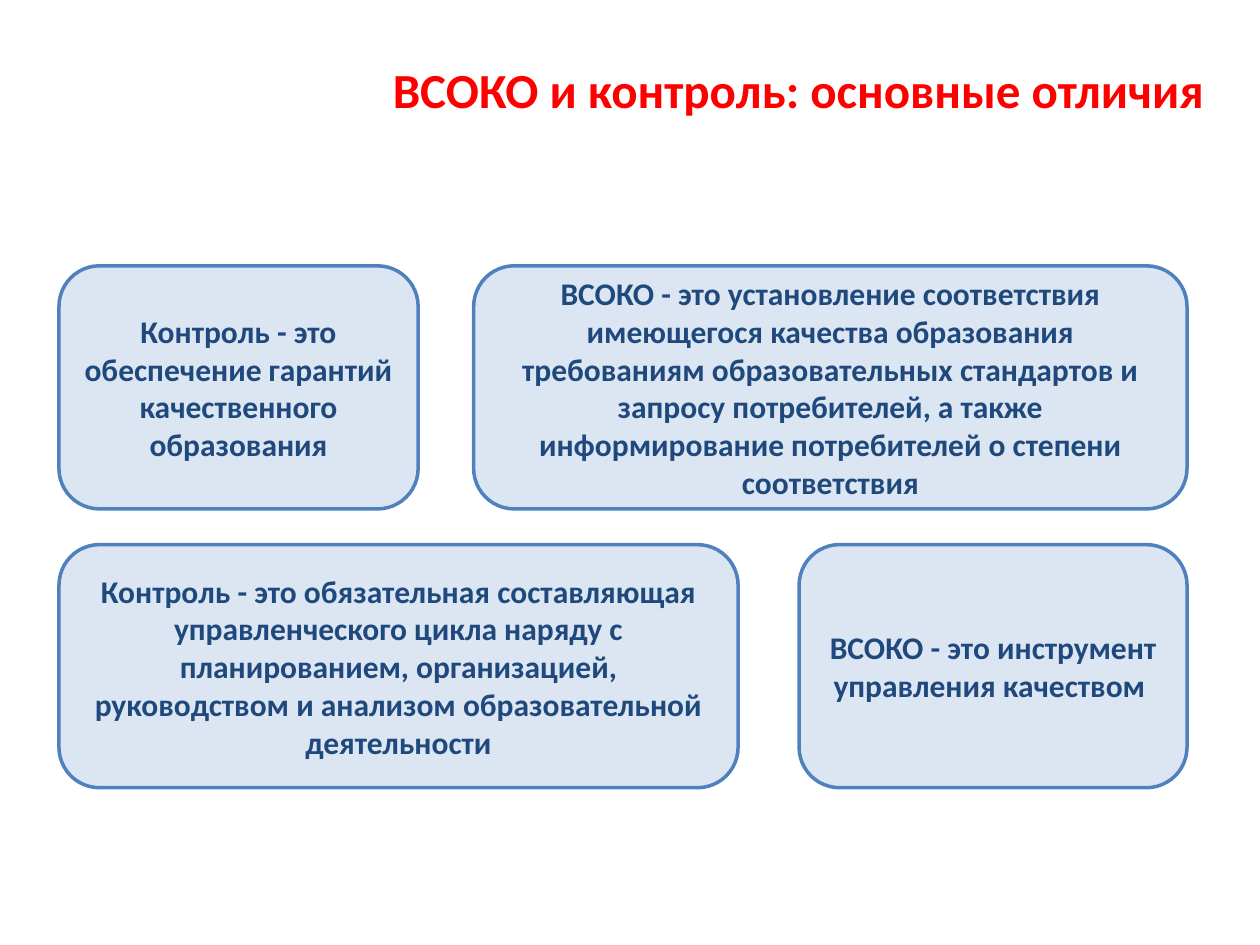
"""Build a slide contrasting internal quality assessment with control."""
from pptx import Presentation
from pptx.dml.color import RGBColor
from pptx.enum.shapes import MSO_SHAPE
from pptx.enum.text import MSO_ANCHOR, MSO_AUTO_SIZE, PP_ALIGN
from pptx.util import Cm, Pt

ROUNDED = MSO_SHAPE.ROUNDED_RECTANGLE
MIDDLE = MSO_ANCHOR.MIDDLE
NO_AUTOFIT = MSO_AUTO_SIZE.NONE
CENTER = PP_ALIGN.CENTER

TITLE = "ВСОКО и контроль: основные отличия"
ROWS = [
    [
        (7.24, "Контроль - это обеспечение гарантий качественного образования"),
        (14.38, "ВСОКО - это установление соответствия имеющегося качества "
                "образования требованиям образовательных стандартов и запросу "
                "потребителей, а также информирование потребителей о степени "
                "соответствия"),
    ],
    [
        (13.69, "Контроль - это обязательная составляющая управленческого цикла "
                "наряду с планированием, организацией, руководством и анализом "
                "образовательной деятельности"),
        (7.82, "ВСОКО - это инструмент управления качеством "),
    ],
]

COLORS = {"title": "FF0000", "text": "1F497D", "fill": "DCE6F2", "line": "4F81BD"}
FONT = "Calibri"
LEFT, RIGHT = 1.19, 23.93
TOP, ROW_STEP, CARD_HEIGHT = 5.36, 5.62, 4.9


def color(name):
    """Return a named slide colour."""
    return RGBColor.from_string(COLORS[name])


def set_text(shape, text, size, color_name):
    """Put centred bold text into a shape."""
    frame = shape.text_frame
    frame.text = text
    frame.word_wrap = True
    frame.auto_size = NO_AUTOFIT
    frame.vertical_anchor = MIDDLE
    paragraph = frame.paragraphs[0]
    paragraph.alignment = CENTER
    font = paragraph.runs[0].font
    font.name = FONT
    font.size = Pt(size)
    font.bold = True
    font.color.rgb = color(color_name)


def add_card(slide, left, top, width, text):
    """Add one rounded statement card."""
    card = slide.shapes.add_shape(
        ROUNDED, Cm(left), Cm(top), Cm(width), Cm(CARD_HEIGHT))
    card.shadow.inherit = False
    card.fill.solid()
    card.fill.fore_color.rgb = color("fill")
    card.line.color.rgb = color("line")
    card.line.width = Pt(2)
    set_text(card, text, 18, "text")


def main():
    """Create and save the presentation."""
    presentation = Presentation()
    presentation.slide_width, presentation.slide_height = Cm(25.4), Cm(19.05)
    slide = presentation.slides.add_slide(presentation.slide_layouts[5])

    title = slide.shapes.title
    title.left, title.top = Cm(7.24), Cm(1.07)
    title.width, title.height = Cm(17.7), Cm(1.45)
    set_text(title, TITLE, 28, "title")

    for index, ((left_width, left_text), (right_width, right_text)) in enumerate(ROWS):
        top = TOP + index * ROW_STEP
        add_card(slide, LEFT, top, left_width, left_text)
        add_card(slide, RIGHT - right_width, top, right_width, right_text)

    presentation.save("out.pptx")


if __name__ == "__main__":
    main()
